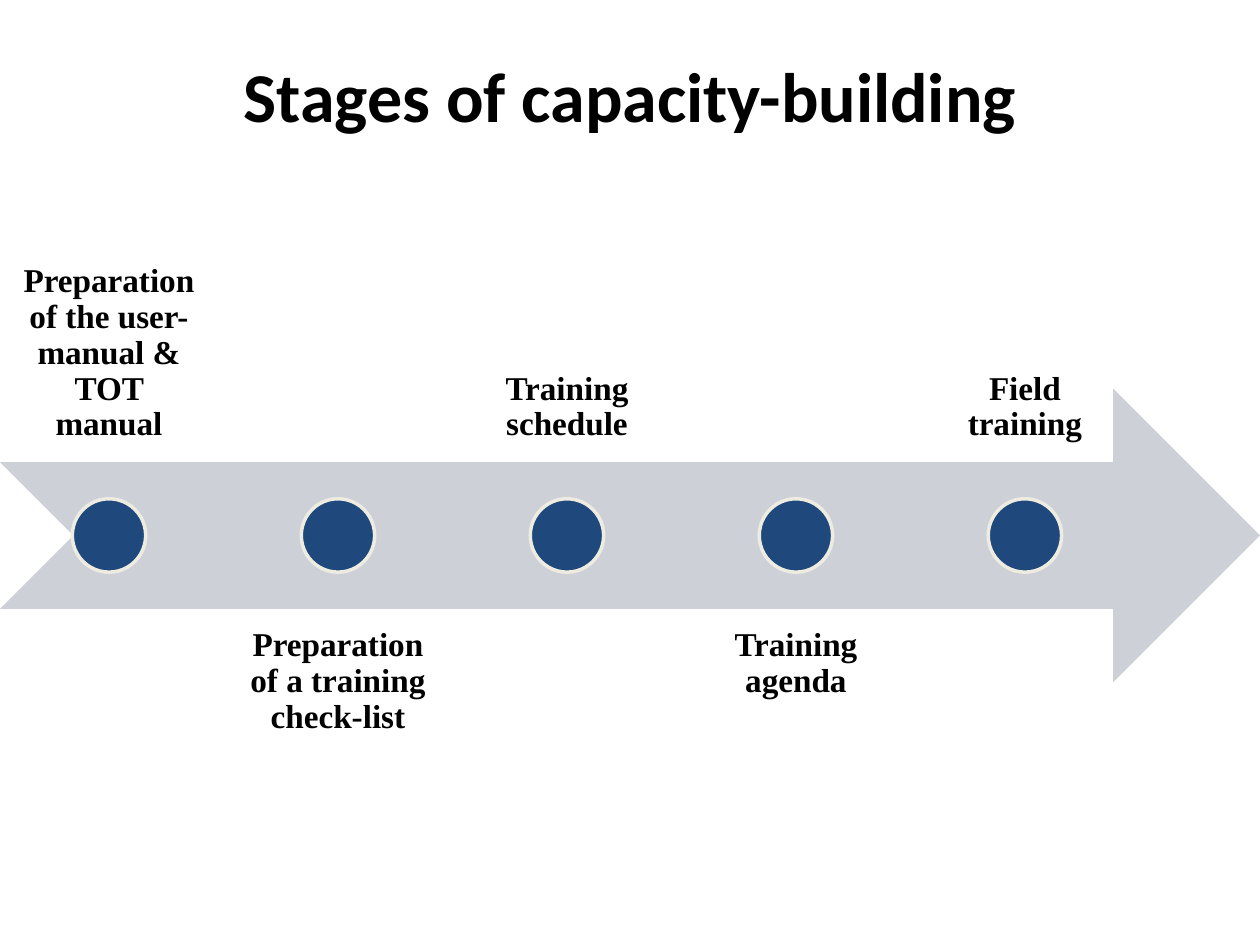
from pptx import Presentation
from pptx.dml.color import RGBColor
from pptx.enum.shapes import MSO_SHAPE
from pptx.enum.text import MSO_ANCHOR, PP_ALIGN
from pptx.util import Inches, Pt

# Content: stages alternate above and below the arrow
TITLE = "Stages of capacity-building"
STAGES = [
    "Preparation of the user-manual & TOT manual",
    "Preparation of a training check-list",
    "Training schedule",
    "Training agenda",
    "Field training",
]

THEME = {
    "arrow": RGBColor.from_string("CDD0D7"),
    "marker": RGBColor.from_string("1F497D"),
    "marker_line": RGBColor.from_string("EEECE1"),
    "marker_line_width": Pt(2),
    "title_font": {"name": "Calibri", "size": Pt(40), "bold": True},
    "label_font": {"name": "Times New Roman", "size": Pt(19), "bold": True},
    "text": RGBColor(0, 0, 0),
}

# Layout in inches
WIDTH, HEIGHT = 10, 7.5
ARROW_HEIGHT = 2.33
ARROW_MIDDLE = 4.25
TIMELINE_WIDTH = 0.9 * WIDTH
GAP_SHARE = 0.05  # gap between columns, as a share of column width
COLUMN_WIDTH = TIMELINE_WIDTH / (len(STAGES) + GAP_SHARE * (len(STAGES) - 1))
COLUMN_STEP = COLUMN_WIDTH * (1 + GAP_SHARE)
MARKER_SIZE = ARROW_HEIGHT / 4
LABEL_MARGIN = 0.15


def set_attributes(target, values):
    for name, value in values.items():
        setattr(target, name, value)


def add_text(shapes, text, box, font, anchor, margin, line_spacing=1.0):
    shape = shapes.add_textbox(*map(Inches, box))
    frame = shape.text_frame
    sides = ("left", "top", "right", "bottom")
    set_attributes(frame, {f"margin_{side}": Inches(margin) for side in sides})
    set_attributes(frame, {"word_wrap": True, "vertical_anchor": anchor})
    paragraph = frame.paragraphs[0]
    set_attributes(paragraph, {"alignment": PP_ALIGN.CENTER,
                               "line_spacing": line_spacing})
    run = paragraph.add_run()
    run.text = text
    set_attributes(run.font, font)
    run.font.color.rgb = THEME["text"]


def add_filled(shapes, kind, box, color):
    shape = shapes.add_shape(kind, *map(Inches, box))
    shape.shadow.inherit = False
    shape.fill.solid()
    shape.fill.fore_color.rgb = color
    shape.line.fill.background()
    return shape


def add_stage(shapes, index, text):
    left = index * COLUMN_STEP
    above = index % 2 == 0
    edge = ARROW_HEIGHT / 4
    top = ARROW_MIDDLE - edge - ARROW_HEIGHT if above else ARROW_MIDDLE + edge
    anchor = MSO_ANCHOR.BOTTOM if above else MSO_ANCHOR.TOP
    add_text(shapes, text, (left, top, COLUMN_WIDTH, ARROW_HEIGHT),
             THEME["label_font"], anchor, LABEL_MARGIN, 0.9)

    marker_box = (left + (COLUMN_WIDTH - MARKER_SIZE) / 2,
                  ARROW_MIDDLE - MARKER_SIZE / 2, MARKER_SIZE, MARKER_SIZE)
    marker = add_filled(shapes, MSO_SHAPE.OVAL, marker_box, THEME["marker"])
    marker.line.color.rgb = THEME["marker_line"]
    marker.line.width = THEME["marker_line_width"]


def main():
    presentation = Presentation()
    set_attributes(presentation, {"slide_width": Inches(WIDTH),
                                  "slide_height": Inches(HEIGHT)})
    slide = presentation.slides.add_slide(presentation.slide_layouts[6])

    # Title
    add_text(slide.shapes, TITLE, (0.05 * WIDTH, 0, 0.9 * WIDTH, 0.2 * HEIGHT),
             THEME["title_font"], MSO_ANCHOR.MIDDLE, 0.05)

    # Timeline: arrow, then labels and markers
    timeline = slide.shapes.add_group_shape().shapes
    arrow_box = (0, ARROW_MIDDLE - ARROW_HEIGHT / 2, WIDTH, ARROW_HEIGHT)
    add_filled(timeline, MSO_SHAPE.NOTCHED_RIGHT_ARROW, arrow_box, THEME["arrow"])
    for index, text in enumerate(STAGES):
        add_stage(timeline, index, text)

    presentation.save("out.pptx")


if __name__ == "__main__":
    main()
